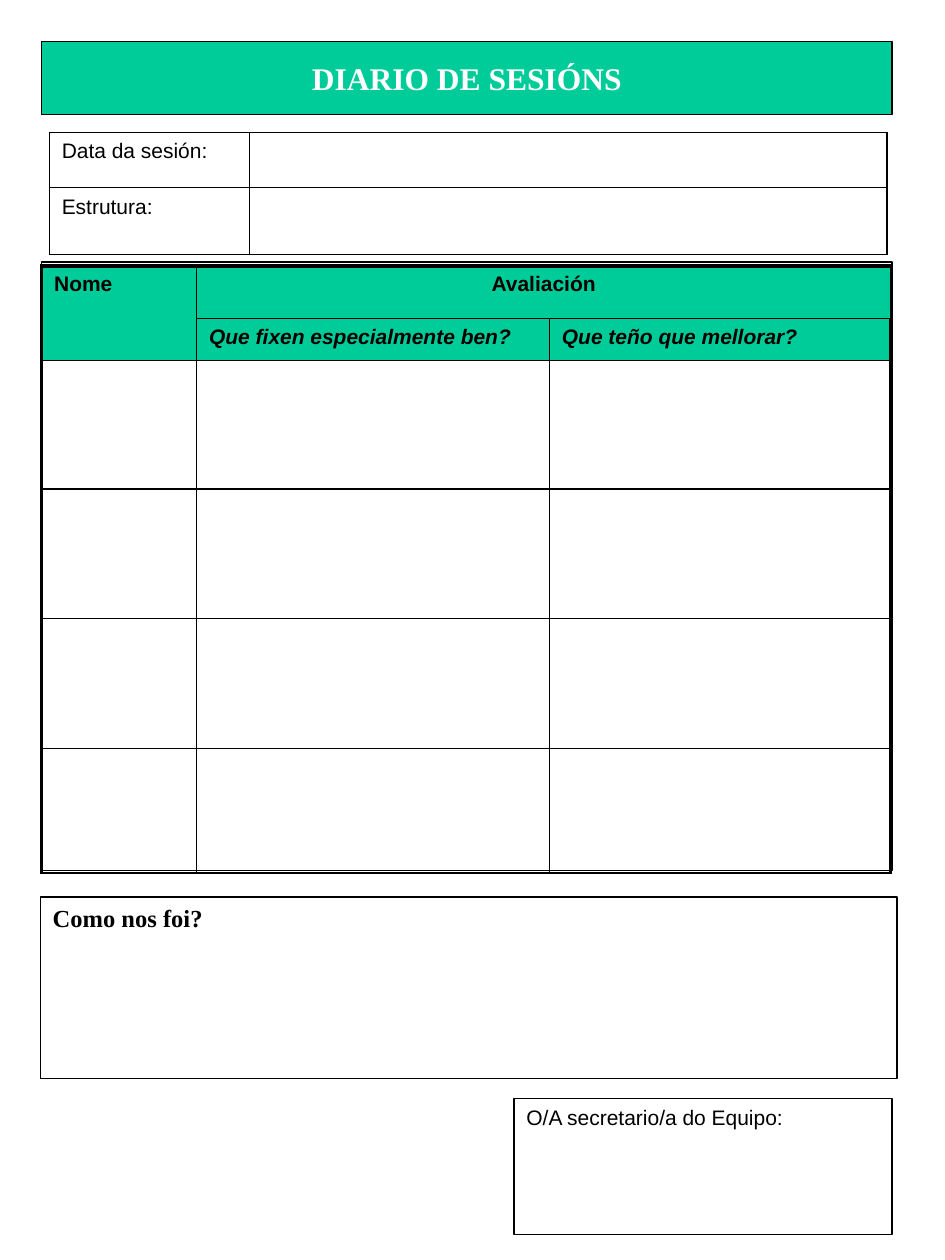
"""Builds a one-page cooperative session diary form."""
from pptx import Presentation, util as u
from pptx.dml.color import RGBColor
from pptx.enum import shapes, text
from pptx.oxml import parse_xml
from pptx.oxml.ns import nsdecls

THEME = dict(green="00CC99", black="000000", white="FFFFFF", serif="Times New Roman",
             sans="Arial", title=18, heading=14, body=12, thin=0.75, rule=1, thick=2.25)
SIZE = (7.5, 10)
LEFT, WIDTH = 0.33, 6.75
PANEL_TOP, PANEL_H = 2.08, 4.83
SIGN_W = 3

TITLE = "DIARIO DE SESIÓNS"
FIELDS = ["Data da sesión:", "Estrutura:"]
FIELD_COLS, FIELD_ROWS = [1.59, 5.06], [0.44, 0.53]
HEADERS = {
    (0, 0): ("Nome", {}),
    (0, 1): ("Avaliación", {"align": "CENTER"}),
    (1, 1): ("Que fixen especialmente ben?", {"italic": True}),
    (1, 2): ("Que teño que mellorar?", {"italic": True}),
}
MERGES = [((0, 0), (1, 0)), ((0, 1), (0, 2))]
REVIEW_COLS, REVIEW_ROWS = [1.23, 2.8, 2.71], [0.42, 0.33, 1.02, 1.03, 1.03, 0.99]
REFLECTION = "Como nos foi?"
SIGNATURE = "O/A secretario/a do Equipo:"


def color(name):
    return RGBColor.from_string(THEME[name])


def write(tf, words, font="sans", size="body", ink="black", bold=False, italic=False,
          align="LEFT", spacing=None):
    p = tf.paragraphs[0]
    p.alignment = getattr(text.PP_ALIGN, align)
    p.line_spacing = spacing
    r = p.add_run()
    r.text = words
    r.font.name, r.font.size = THEME[font], u.Pt(THEME[size])
    r.font.bold, r.font.italic = bold, italic
    r.font.color.rgb = color(ink)


def add_box(s, x, y, w, h, words=None, fill=None, anchor="TOP", **fmt):
    sp = s.shapes.add_shape(shapes.MSO_SHAPE.RECTANGLE, *map(u.Inches, (x, y, w, h)))
    sp.shadow.inherit = False
    paint(sp.fill, fill)
    sp.line.color.rgb = color("black")
    sp.line.width = u.Pt(THEME["thin"])
    sp.text_frame.word_wrap = True
    sp.text_frame.vertical_anchor = getattr(text.MSO_ANCHOR, anchor)
    if words:
        write(sp.text_frame, words, **fmt)


def paint(fill, name):
    if name:
        fill.solid()
        fill.fore_color.rgb = color(name)
    else:
        fill.background()


def add_borders(cell, widths):
    for side, width in zip("LRTB", widths):
        cell._tc.get_or_add_tcPr().append(parse_xml(
            f'<a:ln{side} {nsdecls("a")} w="{u.Pt(THEME[width])}"><a:solidFill>'
            f'<a:srgbClr val="{THEME["black"]}"/></a:solidFill></a:ln{side}>'))


def add_grid(s, x, y, cols, rows, inner, outer, header_rows=0, top=0.05):
    frame = s.shapes.add_table(len(rows), len(cols), *map(u.Inches, (x, y, sum(cols), sum(rows))))
    table = frame.table
    table.first_row = table.horz_banding = False
    for tracks, attr, sizes in ((table.columns, "width", cols), (table.rows, "height", rows)):
        for track, size in zip(tracks, sizes):
            setattr(track, attr, u.Inches(size))
    for i in range(len(rows)):
        for j in range(len(cols)):
            cell = table.cell(i, j)
            cell.margin_top = u.Inches(top)
            edges = (j == 0, j == len(cols) - 1, i == 0, False)
            add_borders(cell, [outer if edge else inner for edge in edges])
            paint(cell.fill, "green" if i < header_rows else None)
    return table


def main():
    prs = Presentation()
    prs.slide_width, prs.slide_height = map(u.Inches, SIZE)
    s = prs.slides.add_slide(prs.slide_layouts[6])

    add_box(s, LEFT, 0.33, WIDTH, 0.58, TITLE, fill="green", anchor="MIDDLE",
            font="serif", size="title", ink="white", bold=True, align="CENTER")
    add_box(s, LEFT, PANEL_TOP, WIDTH, PANEL_H)
    add_box(s, 0.32, 7.12, 6.8, 1.44, REFLECTION, font="serif", size="heading", bold=True)
    add_box(s, LEFT + WIDTH - SIGN_W, 8.72, SIGN_W, 1.08, SIGNATURE, fill="white")

    review = add_grid(s, LEFT, PANEL_TOP + 0.03, REVIEW_COLS, REVIEW_ROWS,
                      "rule", "thick", header_rows=2)
    for first, last in MERGES:
        review.cell(*first).merge(review.cell(*last))
    for place, (words, fmt) in HEADERS.items():
        write(review.cell(*place).text_frame, words, bold=True, **fmt)

    fields = add_grid(s, 0.39, 1.05, FIELD_COLS, FIELD_ROWS, "thin", "thin", top=0.08)
    for i, words in enumerate(FIELDS):
        write(fields.cell(i, 0).text_frame, words, spacing=0.87)

    prs.save("out.pptx")


if __name__ == "__main__":
    main()
